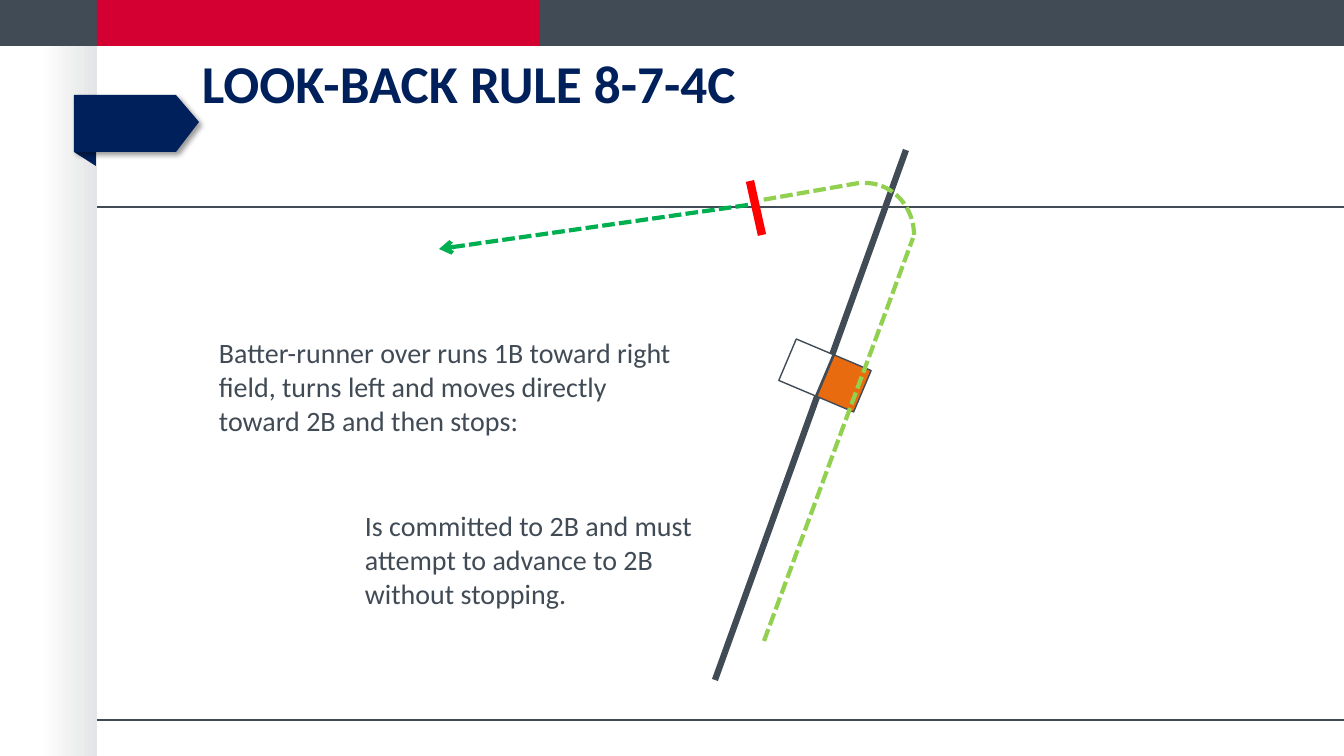
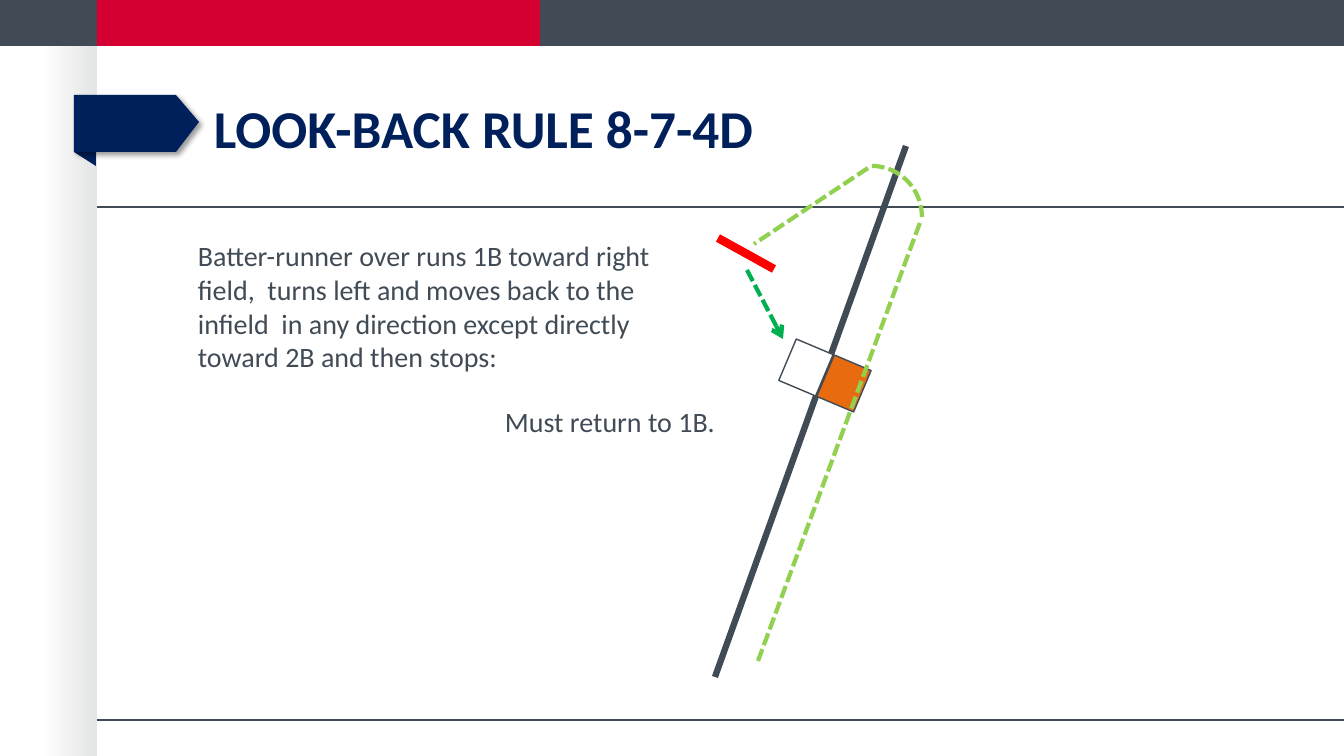
from math import cos, pi, sin

from lxml import etree
from pptx import Presentation
from pptx.dml.color import RGBColor
from pptx.enum.dml import MSO_LINE
from pptx.enum.shapes import MSO_CONNECTOR, MSO_SHAPE
from pptx.enum.text import MSO_ANCHOR
from pptx.oxml.ns import qn
from pptx.util import Pt

PX = 914400 / 100.8
WIDTH, HEIGHT = 1344, 756
FONT = "Calibri"
COLORS = {
    "slate": "414B56",
    "red": "D50032",
    "navy": "00205B",
    "white": "FFFFFF",
    "shade": "E4E5E6",
    "orange": "E96B10",
    "run": "92D050",
    "advance": "00B050",
    "stop": "FF0000",
    "black": "000000",
}

MARGIN = 97
BAND_HEIGHT = 46
RULES_Y = (207, 720)
FOLD = [(74, 152), (96, 152), (96, 166)]
TAG = [(74, 95), (74, 152), (176, 152), (199, 122), (176, 95)]
TITLE_SIZE = (966, 137)
BASES = [((786, 345, 40, 45), "white"), ((824, 361, 40, 45), "orange")]
BASE_TILT = 22.9

# Every path is (start, end); "turn" is a quarter ellipse from its top to its right end.
SLIDES = [
    {
        "title": "LOOK-BACK RULE 8-7-4C",
        "title_at": (192, 19),
        "texts": [
            ((209, 331, 483, 112),
             ["Batter-runner over runs 1B toward right field, turns left "
              "and moves directly toward 2B and then stops:"]),
            ((355, 504, 358, 112),
             ["Is committed to 2B and must",
              "attempt to advance to 2B",
              "without stopping."]),
        ],
        "foul_line": ((715, 680), (906, 150)),
        "run": ((764, 641), (913, 238)),
        "turn": ((865, 183), (914, 235)),
        "back": ((859, 183), (762, 200)),
        "stop": ((750, 181), (762, 235)),
        "advance": ((748, 205), (439, 249)),
    },
    {
        "title": "LOOK-BACK RULE 8-7-4D",
        "title_at": (204, 64),
        "texts": [
            ((188, 234, 521, 146),
             ["Batter-runner over runs 1B toward right field,  turns left "
              "and moves back to the infield  in any direction except "
              "directly toward 2B and then stops:"]),
            ((495, 400, 245, 44), ["Must return to 1B."]),
        ],
        "foul_line": ((715, 677), (906, 146)),
        "run": ((758, 661), (921, 220)),
        "turn": ((872, 166), (922, 217)),
        "back": ((868, 168), (754, 244)),
        "stop": ((718, 238), (774, 269)),
        "advance": ((747, 270), (783, 339)),
    },
]


def emu(*lengths):
    return [round(length * PX) for length in lengths]


def rgb(name):
    return RGBColor.from_string(COLORS[name])


def paint(shape, fill=None, line=None, width=1):
    shape.shadow.inherit = False
    if fill:
        shape.fill.solid()
        shape.fill.fore_color.rgb = rgb(fill)
    else:
        shape.fill.background()
    if line:
        shape.line.color.rgb = rgb(line)
        shape.line.width = Pt(width)
    else:
        shape.line.fill.background()


def add_box(page, place, fill, line=None):
    box = page.shapes.add_shape(MSO_SHAPE.RECTANGLE, *emu(*place))
    paint(box, fill, line)
    return box


def add_outline(page, points, close=True):
    points = [emu(*point) for point in points]
    builder = page.shapes.build_freeform(*points[0])
    builder.add_line_segments(points[1:], close=close)
    return builder.convert_to_shape()


def add_line(page, ends, color, width=1, dashed=False, arrow=False):
    start, end = ends
    line = page.shapes.add_connector(MSO_CONNECTOR.STRAIGHT, *emu(*start, *end))
    line.line.color.rgb = rgb(color)
    line.line.width = Pt(width)
    if dashed:
        line.line.dash_style = MSO_LINE.SQUARE_DOT
    if arrow:
        etree.SubElement(line.line._get_or_add_ln(), qn("a:tailEnd"), type="arrow")
    etree.SubElement(line._element.spPr, qn("a:effectLst"))


def add_text(page, place, lines, color, size, bold=False):
    box = page.shapes.add_textbox(*emu(*place))
    frame = box.text_frame
    frame.word_wrap = True
    frame.text = "\n".join(lines)
    for para in frame.paragraphs:
        font = para.runs[0].font
        font.name, font.size, font.bold = FONT, Pt(size), bold
        font.color.rgb = rgb(color)
    return frame


def add_soft_shadow(shape):
    effects = shape._element.spPr.find(qn("a:effectLst"))
    shadow = etree.SubElement(effects, qn("a:outerShdw"), blurRad=str(Pt(4)),
                              dist=str(Pt(3)), dir="2700000", algn="tl", rotWithShape="0")
    color = etree.SubElement(shadow, qn("a:srgbClr"), val=COLORS["black"])
    etree.SubElement(color, qn("a:alpha"), val="40000")


def add_frame(page):
    """Draw the side shade, top bands, rules and title tag shared by all slides."""
    shade = add_box(page, (40, BAND_HEIGHT, MARGIN - 40, HEIGHT - BAND_HEIGHT), "shade")
    shade.fill.gradient()
    shade.fill.gradient_angle = 0
    for stop, color in zip(shade.fill.gradient_stops, ("white", "shade")):
        stop.color.rgb = rgb(color)
    add_box(page, (0, 0, WIDTH, BAND_HEIGHT), "slate")
    add_box(page, (MARGIN, 0, 443, BAND_HEIGHT), "red")
    for y in RULES_Y:
        add_line(page, ((MARGIN, y), (WIDTH, y)), "slate")
    paint(add_outline(page, FOLD), "navy")
    tag = add_outline(page, TAG)
    paint(tag, "navy")
    add_soft_shadow(tag)


def add_title(page, text, place):
    frame = add_text(page, (*place, *TITLE_SIZE), [text], "navy", 38, bold=True)
    frame.vertical_anchor = MSO_ANCHOR.MIDDLE
    frame.paragraphs[0].line_spacing = Pt(38)


def add_turn(page, ends, steps=24):
    (left, top), (right, bottom) = ends
    angles = [pi / 2 * step / steps for step in range(steps + 1)]
    points = [(left + (right - left) * sin(angle), bottom - (bottom - top) * cos(angle))
              for angle in angles]
    turn = add_outline(page, points, close=False)
    paint(turn, line="run", width=3)
    turn.line.dash_style = MSO_LINE.SQUARE_DOT


def add_play(page, play):
    """Draw the foul line, the double base and the path of the batter-runner."""
    add_line(page, play["foul_line"], "slate", 4.5)
    for place, fill in BASES:
        add_box(page, place, fill, "slate").rotation = BASE_TILT
    add_line(page, play["run"], "run", 3, dashed=True)
    add_line(page, play["stop"], "stop", 6)
    add_turn(page, play["turn"])
    add_line(page, play["back"], "run", 3, dashed=True)
    add_line(page, play["advance"], "advance", 3, dashed=True, arrow=True)


def main():
    deck = Presentation()
    deck.slide_width, deck.slide_height = emu(WIDTH, HEIGHT)
    for content in SLIDES:
        page = deck.slides.add_slide(deck.slide_layouts[6])
        add_frame(page)
        add_title(page, content["title"], content["title_at"])
        add_play(page, content)
        for place, lines in content["texts"]:
            add_text(page, place, lines, "slate", 20)
    deck.save("out.pptx")


if __name__ == "__main__":
    main()
